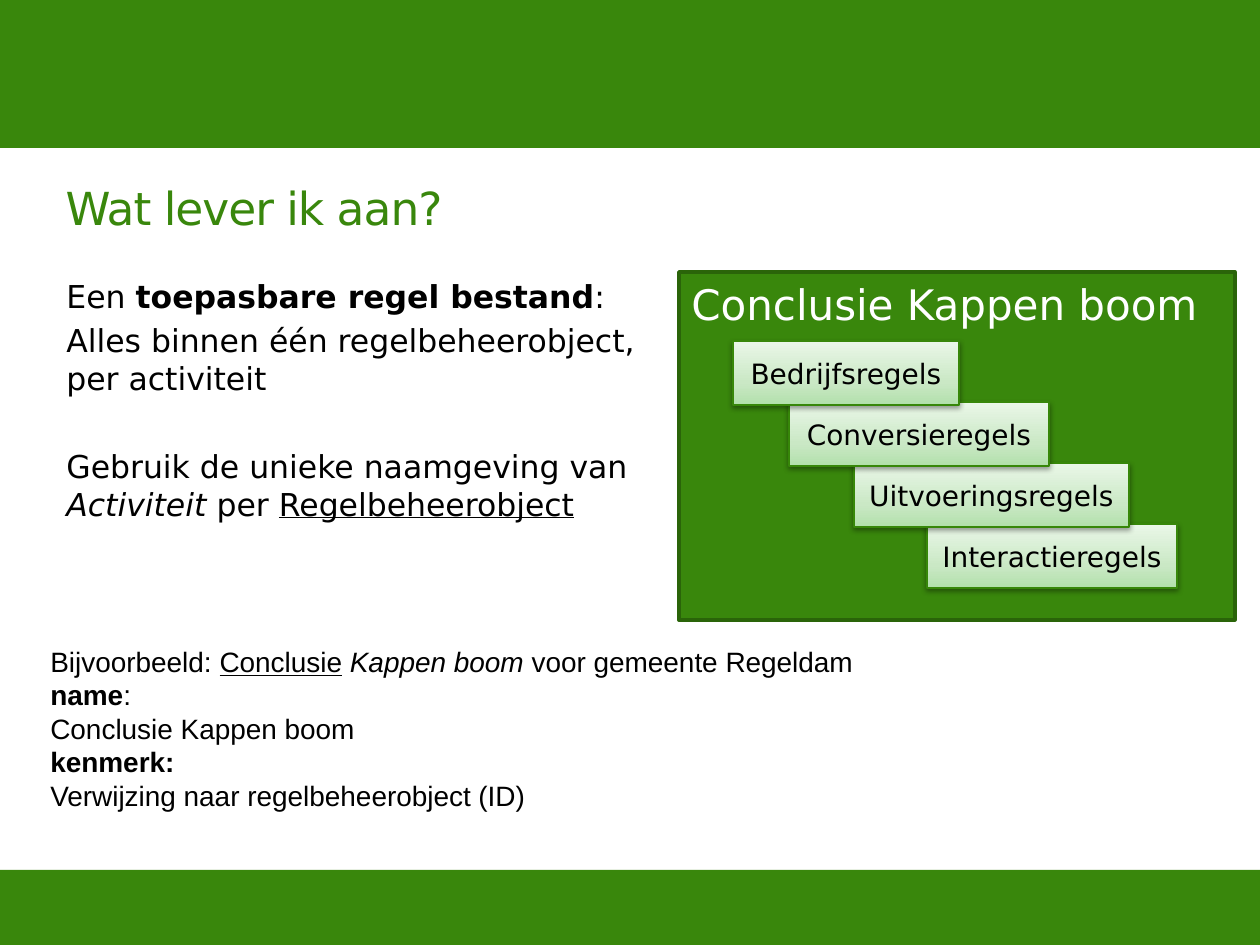
from copy import deepcopy

from pptx import Presentation
from pptx.dml.color import RGBColor
from pptx.enum.shapes import MSO_SHAPE
from pptx.enum.text import MSO_ANCHOR, PP_ALIGN
from pptx.oxml import parse_xml
from pptx.oxml.ns import nsdecls, qn
from pptx.util import Emu, Pt

PX = 914400 // 126
SLIDE_W, SLIDE_H = 1260, 945

GREEN = RGBColor(0x39, 0x87, 0x0C)
DARK_GREEN = RGBColor(0x2A, 0x64, 0x09)
CARD_LINE = RGBColor(0x37, 0x87, 0x09)
CARD_STOPS = [(0, RGBColor(0xB2, 0xE0, 0xAB)),
              (0.35, RGBColor(0xCA, 0xE8, 0xC5)),
              (1, RGBColor(0xEA, 0xF7, 0xE8))]
WHITE = RGBColor(0xFF, 0xFF, 0xFF)
BLACK = RGBColor(0, 0, 0)

SANS, ARIAL = "DejaVu Sans", "Arial"
BOLD, ITALIC, UNDERLINE = {"bold": True}, {"italic": True}, {"underline": True}

SHADOW = (f'<a:outerShdw {nsdecls("a")} blurRad="40000" dist="20000" '
          'dir="5400000" rotWithShape="0"><a:srgbClr val="000000">'
          '<a:alpha val="38000"/></a:srgbClr></a:outerShdw>')


def px(*lengths):
    return [Emu(n * PX) for n in lengths]


def add_runs(p, runs, name, size, color):
    for text, style in runs:
        r = p.add_run()
        r.text = text
        for key, value in {"name": name, "size": Pt(size), **style}.items():
            setattr(r.font, key, value)
        r.font.color.rgb = color


def add_rect(s, box, line=None, line_width=0):
    sp = s.shapes.add_shape(MSO_SHAPE.RECTANGLE, *px(*box))
    sp.shadow.inherit = False
    sp.fill.solid()
    sp.fill.fore_color.rgb = GREEN
    if line is None:
        sp.line.fill.background()
    else:
        sp.line.color.rgb = line
        sp.line.width = Pt(line_width)
    return sp


def add_text(s, box, paragraphs, name, size):
    """Place paragraphs, each a pair of space before and list of runs."""
    tf = s.shapes.add_textbox(*px(*box)).text_frame
    tf.word_wrap = True
    for i, (space, runs) in enumerate(paragraphs):
        p = tf.paragraphs[0] if i == 0 else tf.add_paragraph()
        p.space_before = Pt(space)
        add_runs(p, runs, name, size, BLACK)


def add_title(s, box, text):
    title = s.shapes.title
    title.left, title.top, title.width, title.height = px(*box)
    tf = title.text_frame
    tf.vertical_anchor = MSO_ANCHOR.TOP
    p = tf.paragraphs[0]
    p.alignment = PP_ALIGN.LEFT
    add_runs(p, [(text, {})], SANS, 26, GREEN)
    p.runs[0].font._element.set("spc", "-60")


def add_card(s, box, text):
    sp = add_rect(s, box, CARD_LINE, 0.75)
    # Three-stop gradient, light at the top
    sp.fill.gradient()
    sp.fill.gradient_angle = 90
    stop_list = sp._element.spPr.find(qn("a:gradFill")).find(qn("a:gsLst"))
    stop_list.insert(1, deepcopy(stop_list[0]))
    for stop, (position, color) in zip(sp.fill.gradient_stops, CARD_STOPS):
        stop.position = position
        stop.color.rgb = color
    sp._element.spPr.find(qn("a:effectLst")).append(parse_xml(SHADOW))
    tf = sp.text_frame
    tf.word_wrap = False
    tf.vertical_anchor = MSO_ANCHOR.MIDDLE
    p = tf.paragraphs[0]
    p.alignment = PP_ALIGN.CENTER
    add_runs(p, [(text, {})], SANS, 16, BLACK)


def add_rule_panel(s, box, heading, cards):
    x, y = box[:2]
    tf = add_rect(s, box, DARK_GREEN, 2).text_frame
    tf.word_wrap = True
    tf.vertical_anchor = MSO_ANCHOR.TOP
    p = tf.paragraphs[0]
    p.alignment = PP_ALIGN.LEFT
    add_runs(p, [(heading, {})], SANS, 24, WHITE)
    # Staircase of cards, the topmost one in front
    for i, (text, left, width) in reversed(list(enumerate(cards))):
        add_card(s, (x + left, y + 69 + 61 * i, width, 64), text)


def main():
    prs = Presentation()
    prs.slide_width, prs.slide_height = px(SLIDE_W, SLIDE_H)
    s = prs.slides.add_slide(prs.slide_layouts[5])

    # Header and footer bands
    add_rect(s, (0, 0, SLIDE_W, 148))
    add_rect(s, (0, 870, SLIDE_W, 75))

    add_title(s, (53, 174, 1130, 78), "Wat lever ik aan?")

    # Explanation
    add_text(s, (54, 271, 655, 350), [
        (0, [("Een ", {}), ("toepasbare regel bestand", BOLD), (":", {})]),
        (3.6, [("Alles binnen één regelbeheerobject, per activiteit", {})]),
        (28.6, [("Gebruik de unieke naamgeving van ", {}),
                ("Activiteit", ITALIC), (" per ", {}),
                ("Regelbeheerobject", UNDERLINE)]),
    ], SANS, 18)

    add_rule_panel(s, (679, 272, 556, 348), "Conclusie Kappen boom", [
        ("Bedrijfsregels", 54, 226),
        ("Conversieregels", 110, 260),
        ("Uitvoeringsregels", 175, 275),
        ("Interactieregels", 248, 250),
    ])

    # Example
    add_text(s, (38, 638, 1148, 183), [
        (0, [("Bijvoorbeeld: ", {}), ("Conclusie", UNDERLINE), (" ", {}),
             ("Kappen boom ", ITALIC), ("voor gemeente Regeldam", {})]),
        (0, [("name", BOLD), (":", {})]),
        (0, [("Conclusie Kappen boom", {})]),
        (0, [("kenmerk:", BOLD)]),
        (0, [("Verwijzing naar regelbeheerobject (ID)", {})]),
    ], ARIAL, 16)

    prs.save("out.pptx")


if __name__ == "__main__":
    main()
